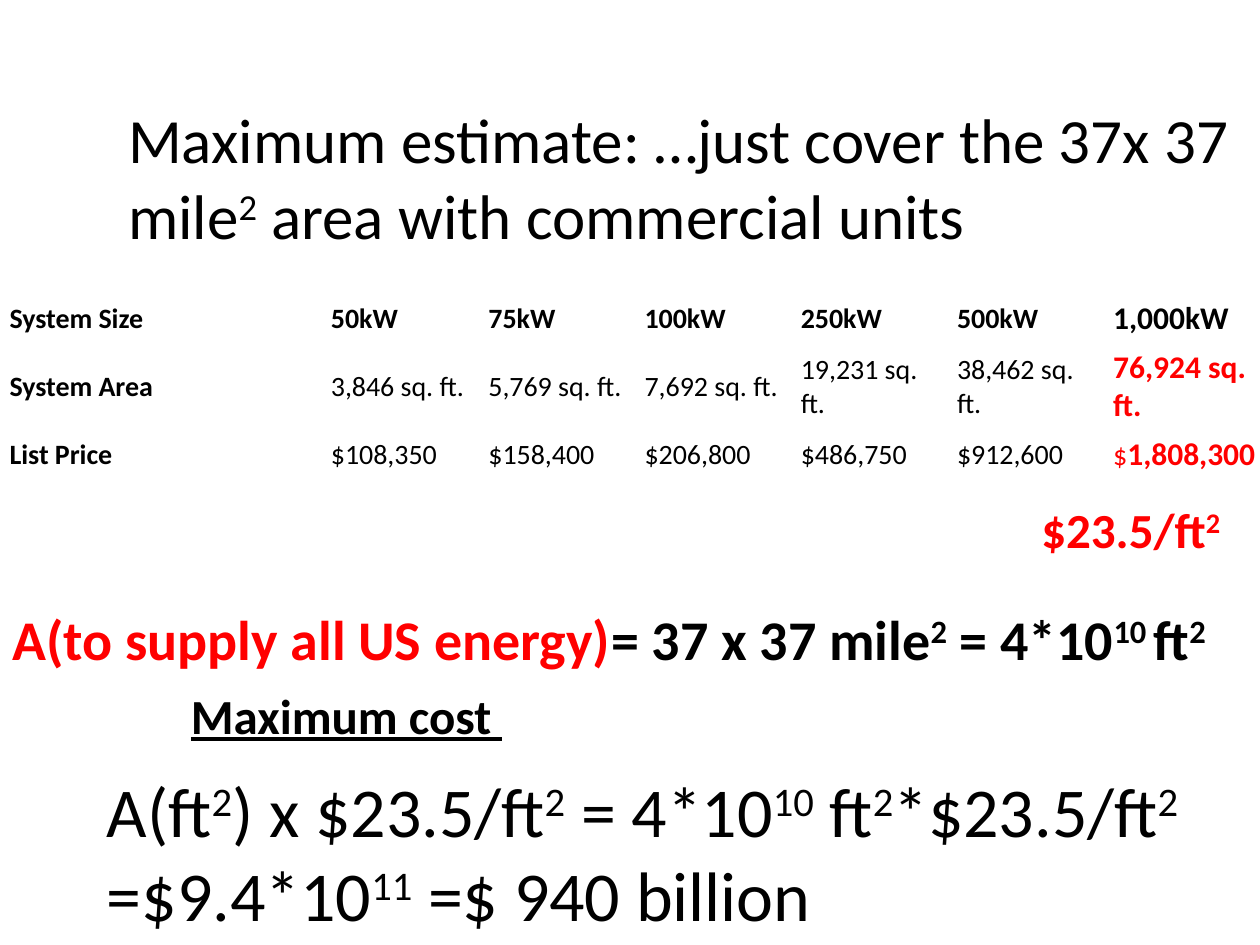
from pptx import Presentation
from pptx.dml.color import RGBColor
from pptx.enum import text
from pptx.util import Pt

BLACK, RED = "000000", "FF0000"


def style(font, size, color, bold=False):
    font.name, font.size, font.bold = "Calibri", Pt(size), bold
    font.color.rgb = RGBColor.from_string(color)


def write(sp, box, size, parts, bold=False):
    """Place a shape and fill it; text between ^ marks is superscript."""
    sp.left, sp.top, sp.width, sp.height = [Pt(v) for v in box]
    tf = sp.text_frame
    tf.word_wrap = True
    tf.auto_size = text.MSO_AUTO_SIZE.NONE
    tf.vertical_anchor = text.MSO_ANCHOR.TOP
    p = tf.paragraphs[0]
    p.alignment = text.PP_ALIGN.LEFT
    style(p.font, size, parts[0][1], bold)
    for content, color in parts:
        for i, piece in enumerate(content.split("^")):
            if piece:
                r = p.add_run()
                r.text = piece
                style(r.font, size, color, bold)
                if i % 2:
                    r._r.get_or_add_rPr().set("baseline", "30000")
    return p


prs = Presentation()
prs.slide_width, prs.slide_height = Pt(720), Pt(540)
slide = prs.slides.add_slide(prs.slide_layouts[5])

# Title
write(slide.shapes.title, (66, 54, 654, 94.5), 36,
      [("Maximum estimate: …just cover the 37x 37 mile^2^ area with commercial units", BLACK)])

# Price table: the largest system is emphasised in the last column
rows = [
    ["System Size", "50kW", "75kW", "100kW", "250kW", "500kW", "1,000kW"],
    ["System Area", "3,846 sq. ft.", "5,769 sq. ft.", "7,692 sq. ft.",
     "19,231 sq. ft.", "38,462 sq. ft.", "76,924 sq. ft."],
    ["List Price", "$108,350", "$158,400", "$206,800", "$486,750", "$912,600", "$1,808,300"],
]
widths = [183.6, 90] + [89.28] * 5
heights = [24, 42.5, 24]
table = slide.shapes.add_table(len(rows), len(widths), Pt(2.5), Pt(168),
                               Pt(sum(widths)), Pt(sum(heights))).table
table.first_row = table.horz_banding = False
for column, width in zip(table.columns, widths):
    column.width = Pt(width)
for row, height in zip(table.rows, heights):
    row.height = Pt(height)
for i, row in enumerate(rows):
    for j, value in enumerate(row):
        cell = table.cell(i, j)
        cell.fill.background()
        cell.vertical_anchor = text.MSO_ANCHOR.MIDDLE
        cell.margin_left = cell.margin_right = cell.margin_top = cell.margin_bottom = Pt(3)
        last = j == len(row) - 1
        p = cell.text_frame.paragraphs[0]
        style(p.font, 18 if last else 16, RED if last and i else BLACK,
              bold=i == 0 or j == 0 or last)
        # The dollar sign of the emphasised price stays small and regular
        pieces = ["$", value[1:]] if last and value.startswith("$") else [value]
        for piece in pieces:
            r = p.add_run()
            r.text = piece
            if piece == "$":
                style(r.font, 16, RED)

# Unit price, area and cost lines
lines = [
    ((588, 282, 132, 41), 28, [("$23.5/ft^2^", RED)], True),
    ((0, 342, 720, 46), 32, [("A(to supply all US energy)", RED),
                             ("= 37 x 37 mile^2^ = 4*10^10 ^ft^2^", BLACK)], True),
    ((54, 435, 678, 104.5), 40,
     [("A(ft^2^) x $23.5/ft^2^ = 4*10^10^ ft^2^*$23.5/ft^2^ =$9.4*10^11^ =$ 940 billion", BLACK)],
     False),
    ((102, 388, 414, 41), 28, [("Maximum cost ", BLACK)], True),
]
for box, size, parts, bold in lines:
    sp = slide.shapes.add_textbox(0, 0, 0, 0)
    p = write(sp, box, size, parts, bold)

# The last line is the underlined heading of the cost
p.runs[0].font.underline = True

prs.save("out.pptx")
